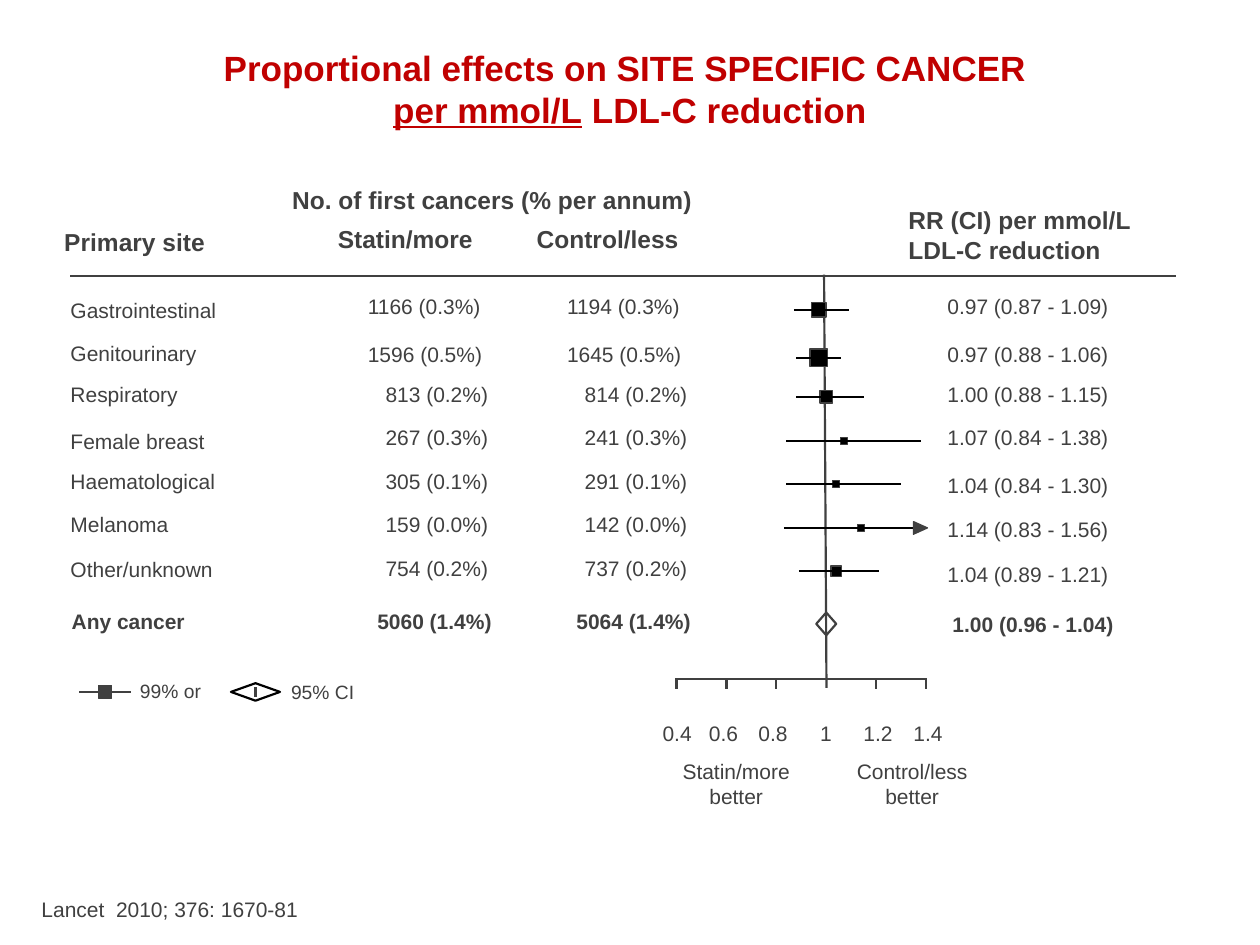
from dataclasses import dataclass

from lxml import etree
from pptx import Presentation
from pptx.dml.color import RGBColor
from pptx.enum.shapes import MSO_CONNECTOR, MSO_SHAPE
from pptx.enum.text import MSO_AUTO_SIZE, PP_ALIGN
from pptx.oxml.ns import qn
from pptx.util import Pt

STRAIGHT = MSO_CONNECTOR.STRAIGHT
RECTANGLE, DIAMOND = MSO_SHAPE.RECTANGLE, MSO_SHAPE.DIAMOND
LEFT, CENTER = PP_ALIGN.LEFT, PP_ALIGN.CENTER
FIT, FIXED = MSO_AUTO_SIZE.SHAPE_TO_FIT_TEXT, MSO_AUTO_SIZE.NONE

COLORS = {"ink": "404040", "black": "000000", "title": "C00000"}
AXIS_LEFT, AXIS_Y, AXIS_UNIT = 386.6, 388, 142.6
AXIS_MIN, AXIS_MAX = 0.4, 1.4
COUNT_COLUMNS = (210.2, 324)


@dataclass
class Row:
    site: str
    counts: tuple
    ratio: tuple
    tops: tuple
    mark_y: float
    mark_size: float


ROWS = [
    Row("Gastrointestinal", ("1166 (0.3%)", "1194 (0.3%)"), (0.97, 0.87, 1.09), (169.9, 167.8, 167.8), 177.1, 8.3),
    Row("Genitourinary", ("1596 (0.5%)", "1645 (0.5%)"), (0.97, 0.88, 1.06), (194.4, 195.1, 195.1), 204.5, 10),
    Row("Respiratory", ("813 (0.2%)", "814 (0.2%)"), (1.00, 0.88, 1.15), (218.2, 218.2, 218.2), 226.8, 7),
    Row("Female breast", ("267 (0.3%)", "241 (0.3%)"), (1.07, 0.84, 1.38), (244.8, 242.6, 242.6), 252, 4),
    Row("Haematological", ("305 (0.1%)", "291 (0.1%)"), (1.04, 0.84, 1.30), (267.8, 267.8, 270), 276.5, 4),
    Row("Melanoma", ("159 (0.0%)", "142 (0.0%)"), (1.14, 0.83, 1.56), (292.3, 292.3, 295.2), 301.7, 4),
    Row("Other/unknown", ("754 (0.2%)", "737 (0.2%)"), (1.04, 0.89, 1.21), (318.2, 317.5, 321.1), 326.5, 6),
]
TOTAL = Row("Any cancer", ("5060 (1.4%)", "5064 (1.4%)"), (1.00, 0.96, 1.04), (347.8, 347.8, 349.2), 356.5, 13)


def axis_x(value):
    return AXIS_LEFT + (value - AXIS_MIN) * AXIS_UNIT


def color(name):
    return RGBColor.from_string(COLORS[name])


class Painter:
    font = "Arial"
    line_width = 1.25

    def __init__(self, page):
        self.page = page

    def text(self, left, top, width, height, lines, size=12, bold=False, ink="ink",
             align=LEFT, margins=(0, 0), wrap=True, fit=FIT):
        box = self.page.shapes.add_textbox(Pt(left), Pt(top), Pt(width), Pt(height))
        frame = box.text_frame
        frame.word_wrap = wrap
        frame.auto_size = fit
        frame.margin_left = frame.margin_right = Pt(margins[0])
        frame.margin_top = frame.margin_bottom = Pt(margins[1])
        for index, line in enumerate(lines):
            para = frame.add_paragraph() if index else frame.paragraphs[0]
            para.alignment = align
            self.run(para, line, size, bold, ink)
        return frame

    def run(self, para, words, size, bold=False, ink="ink", underline=None):
        span = para.add_run()
        span.text = words
        span.font.name = self.font
        span.font.size = Pt(size)
        span.font.bold = bold
        span.font.underline = underline
        span.font.color.rgb = color(ink)

    def line(self, x1, y1, x2, y2, ink="ink", width=line_width):
        link = self.page.shapes.add_connector(STRAIGHT, Pt(x1), Pt(y1), Pt(x2), Pt(y2))
        link.line.color.rgb = color(ink)
        link.line.width = Pt(width)
        etree.SubElement(link._element.spPr, qn("a:effectLst"))

    def style(self, shape, fill, ink, width):
        shape.shadow.inherit = False
        if fill:
            shape.fill.solid()
            shape.fill.fore_color.rgb = color(fill)
        else:
            shape.fill.background()
        shape.line.color.rgb = color(ink)
        shape.line.width = Pt(width)

    def square(self, x, y, size, fill="black"):
        shape = self.page.shapes.add_shape(
            RECTANGLE, Pt(x - size / 2), Pt(y - size / 2), Pt(size), Pt(size))
        self.style(shape, fill, "ink", 0)

    def diamond(self, x, y, width, height, ink="ink"):
        shape = self.page.shapes.add_shape(
            DIAMOND, Pt(x - width / 2), Pt(y - height / 2), Pt(width), Pt(height))
        self.style(shape, None, ink, self.line_width)

    def arrowhead(self, tip_x, y, length, height):
        base = tip_x - length
        builder = self.page.shapes.build_freeform(Pt(base), Pt(y - height / 2))
        builder.add_line_segments([(Pt(tip_x), Pt(y)), (Pt(base), Pt(y + height / 2))], close=True)
        self.style(builder.convert_to_shape(), "ink", "ink", 0)

    def row_text(self, row, bold=False):
        site_top, count_top, ratio_top = row.tops
        self.text(41 if bold else 40.3, site_top, 150, 14.4, [row.site], bold=bold)
        short = len(row.counts[0]) < len(ROWS[0].counts[0])
        shift = 5.4 if bold else 10.1 if short else 0
        for column, count in zip(COUNT_COLUMNS, row.counts):
            self.text(column + shift, count_top, 107, 14.4, [count], bold=bold)
        value, low, high = row.ratio
        self.text(544.3 if bold else 541.4, ratio_top, 160, 14.4,
                  [f"{value:.2f} ({low:.2f} - {high:.2f})"], bold=bold)

    def interval(self, row):
        value, low, high = row.ratio
        self.square(axis_x(value), row.mark_y, row.mark_size)
        self.line(axis_x(low), row.mark_y, axis_x(min(high, AXIS_MAX)), row.mark_y, "black")
        if high > AXIS_MAX:
            self.arrowhead(axis_x(AXIS_MAX) + 0.8, row.mark_y, 8, 7.2)


def main():
    deck = Presentation()
    deck.slide_width, deck.slide_height = Pt(720), Pt(540)
    painter = Painter(deck.slides.add_slide(deck.slide_layouts[6]))

    title = painter.text(0, 23, 720, 71, ["Proportional effects on SITE SPECIFIC CANCER "], 20, True,
                         "title", CENTER, (7.2, 3.6), fit=FIXED)
    heading = title.paragraphs[0]
    heading.add_line_break()
    painter.run(heading, "per mmol/L", 20, True, "title", True)
    painter.run(heading, " LDL-C reduction", 20, True, "title", False)

    for left, top, width, lines in [
        (36.7, 129.6, 123, ["Primary site"]),
        (167, 105.8, 271, ["No. of first cancers (% per annum)"]),
        (193, 128.2, 110, ["Statin/more"]),
        (306.7, 128.2, 160, ["Control/less"]),
        (519.1, 117.4, 195.8, ["RR (CI) per mmol/L", "LDL-C reduction"]),
    ]:
        painter.text(left, top, width, 17 * len(lines), lines, 14, True)
    painter.line(40.3, 157.7, 671.8, 157.7)

    painter.line(472.3, 393.1, 470.9, 157)
    painter.line(386, AXIS_Y, 530, AXIS_Y)
    for value, center in [(0.4, 386.9), (0.6, 413.4), (0.8, 441.7), (1, 472), (1.2, 501.7), (1.4, 530.3)]:
        painter.text(center - 12, 411.8, 24, 14.4, [f"{value:g}"], align=CENTER)
        if value != 1:
            painter.line(axis_x(value), AXIS_Y, axis_x(value), AXIS_Y + 5.8)
    painter.text(371, 433.4, 99.4, 28.8, ["Statin/more", "better"], align=CENTER)
    painter.text(470.5, 433.4, 101.5, 28.8, ["Control/less", "better"], align=CENTER)

    for row in ROWS:
        painter.row_text(row)
        painter.interval(row)
    painter.row_text(TOTAL, bold=True)
    value, low, high = TOTAL.ratio
    painter.diamond(axis_x(value), TOTAL.mark_y, axis_x(high) - axis_x(low), TOTAL.mark_size)

    painter.line(45.4, 395.3, 74.9, 395.3)
    painter.square(60.1, 395.3, 7.5, "ink")
    painter.text(79.9, 388.1, 40, 13, ["99% or"], 11)
    painter.diamond(146, 395.4, 28, 10, "black")
    painter.line(146, 398.2, 146, 392.4, width=0)
    painter.text(166.3, 388.8, 40, 13, ["95% CI"], 11)

    painter.text(16.6, 509, 162, 21.6, ["Lancet  2010; 376: 1670-81"], margins=(7.2, 3.6), wrap=False)
    deck.save("out.pptx")


if __name__ == "__main__":
    main()
